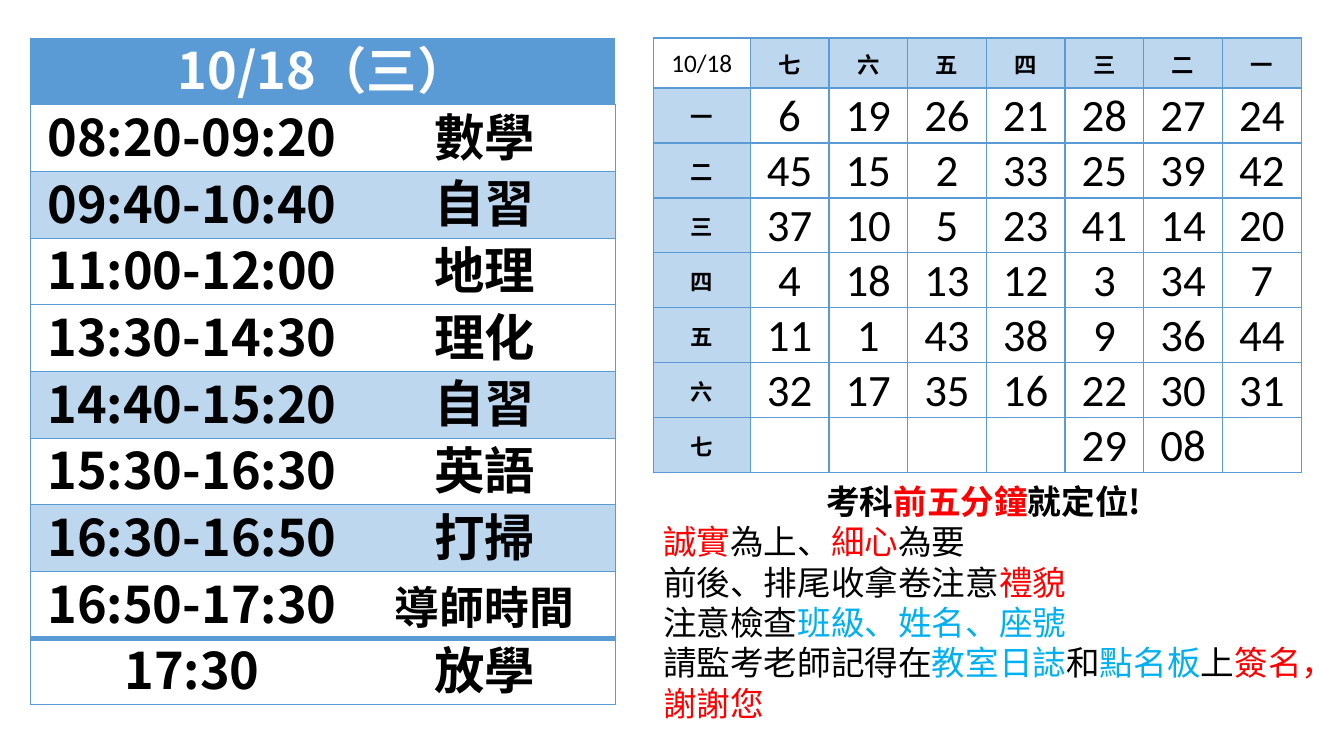
import pptx
import pptx.util
import pptx.dml.color
import pptx.enum.text
import pptx.oxml.ns
import lxml.etree

SCALE = 914400 / 100.8
THEME = {
    "blue": "5B9BD5", "pale": "BDD7EE", "white": "FFFFFF",
    "black": "000000", "red": "FF0000", "cyan": "00B0F0",
    "cjk": "Noto Sans CJK JP", "latin": "Calibri",
    "time": 36, "long": 32, "seat": 32, "date": 18, "head": 16, "note": 24,
}
ALIGN = pptx.enum.text.PP_ALIGN
ANCHOR = pptx.enum.text.MSO_ANCHOR


def style(para, size, face, color="black", bold=False, align=ALIGN.CENTER):
    para.alignment = align
    font = para.font
    font.size = pptx.util.Pt(THEME[size])
    font.bold = bold
    font.name = THEME[face]
    font.color.rgb = pptx.dml.color.RGBColor.from_string(THEME[color])
    east = lxml.etree.SubElement(font._element, pptx.oxml.ns.qn("a:ea"))
    east.set("typeface", THEME["cjk"])


def paint(cell, fill, edges):
    """Fill a cell and draw its edges, given as {side: width in points}."""
    props = cell._tc.get_or_add_tcPr()
    for side in ("L", "R", "T", "B"):
        line = lxml.etree.SubElement(props, pptx.oxml.ns.qn("a:ln" + side))
        width = edges.get(side, 0)
        line.set("w", str(int(pptx.util.Pt(width))))
        kind = "a:solidFill" if width else "a:noFill"
        ink = lxml.etree.SubElement(line, pptx.oxml.ns.qn(kind))
        if width:
            tone = lxml.etree.SubElement(ink, pptx.oxml.ns.qn("a:srgbClr"))
            tone.set("val", THEME["blue"])
    cell.fill.solid()
    cell.fill.fore_color.rgb = pptx.dml.color.RGBColor.from_string(THEME[fill])


deck = pptx.Presentation()
deck.slide_width = pptx.util.Inches(13.33)
deck.slide_height = pptx.util.Inches(7.5)
slide = deck.slides.add_slide(deck.slide_layouts[6])

# Notes for the exam room
box = [int(n * SCALE) for n in (653, 476, 661, 285)]
frame = slide.shapes.add_textbox(*box).text_frame
frame.word_wrap = True
notes = [
    [("考科", "black"), ("前五分鐘", "red"), ("就定位!", "black")],
    [("誠實", "red"), ("為上、", "black"), ("細心", "red"), ("為要", "black")],
    [("前後、排尾收拿卷注意", "black"), ("禮貌", "red")],
    [("注意檢查", "black"), ("班級、姓名、座號", "cyan")],
    [("請監考老師記得在", "black"), ("教室日誌", "cyan"), ("和", "black"),
     ("點名板", "cyan"), ("上", "black"), ("簽名，謝謝您", "red")],
]
for i, note in enumerate(notes):
    para = frame.add_paragraph() if i else frame.paragraphs[0]
    para.line_spacing = pptx.util.Pt(28.8)
    style(para, "note", "cjk", bold=i == 0,
          align=ALIGN.LEFT if i else ALIGN.CENTER)
    for text, color in note:
        run = para.add_run()
        run.text = text
        run.font.color.rgb = pptx.dml.color.RGBColor.from_string(THEME[color])

# Timetable of the day
plan = [
    ("10/18（三）", ""), ("08:20-09:20", "數學"), ("09:40-10:40", "自習"),
    ("11:00-12:00", "地理"), ("13:30-14:30", "理化"), ("14:40-15:20", "自習"),
    ("15:30-16:30", "英語"), ("16:30-16:50", "打掃"),
    ("16:50-17:30", "導師時間"), ("17:30", "放學"),
]
box = [int(n * SCALE) for n in (30, 38, 585, 667)]
table = slide.shapes.add_table(len(plan), 2, *box).table
for col, width in zip(table.columns, (324, 261)):
    col.width = int(width * SCALE)
last = len(plan) - 1
for r, row in enumerate(plan):
    table.rows[r].height = box[3] // len(plan)
    fill = "pale" if row[1] in ("自習", "打掃") else "white"
    for c, text in enumerate(row):
        cell = table.cell(r, c)
        cell.margin_left = cell.margin_right = int(7 * SCALE)
        cell.margin_top = cell.margin_bottom = 0
        cell.vertical_anchor = ANCHOR.MIDDLE if c == 0 and 0 < r < last else ANCHOR.TOP
        edges = {"T": 4 if r == last else 0.5, "B": 4 if r == last - 1 else 0.5}
        edges["R" if c else "L"] = 0.5
        paint(cell, fill if r else "blue", edges)
        para = cell.text_frame.paragraphs[0]
        para.line_spacing = pptx.util.Pt(47)
        style(para, "long" if text == "導師時間" else "time", "cjk",
              "black" if r else "white", True)
        if text:
            para.add_run().text = text
table.cell(0, 0).merge(table.cell(0, 1))

# Seating chart
seats = [
    ("10/18", "七", "六", "五", "四", "三", "二", "一"),
    ("一", "6", "19", "26", "21", "28", "27", "24"),
    ("二", "45", "15", "2", "33", "25", "39", "42"),
    ("三", "37", "10", "5", "23", "41", "14", "20"),
    ("四", "4", "18", "13", "12", "3", "34", "7"),
    ("五", "11", "1", "43", "38", "9", "36", "44"),
    ("六", "32", "17", "35", "16", "22", "30", "31"),
    ("七", "", "", "", "", "29", "08", ""),
]
box = [int(n * SCALE) for n in (653, 38, 648, 435)]
table = slide.shapes.add_table(8, 8, *box).table
for c, col in enumerate(table.columns):
    col.width = int(551 * SCALE / 7) if c else int(97 * SCALE)
for r, row in enumerate(seats):
    table.rows[r].height = int((55 if r else 50) * SCALE)
    for c, text in enumerate(row):
        cell = table.cell(r, c)
        cell.margin_left = cell.margin_right = cell.margin_top = int(SCALE)
        cell.margin_bottom = 0
        cell.vertical_anchor = ANCHOR.MIDDLE
        head = (r == 0) != (c == 0)
        paint(cell, "pale" if head else "white", dict.fromkeys("LRTB", 1))
        size = "head" if head else "seat" if r else "date"
        para = cell.text_frame.paragraphs[0]
        style(para, size, "latin", bold=head)
        if text:
            para.add_run().text = text

deck.save("out.pptx")
